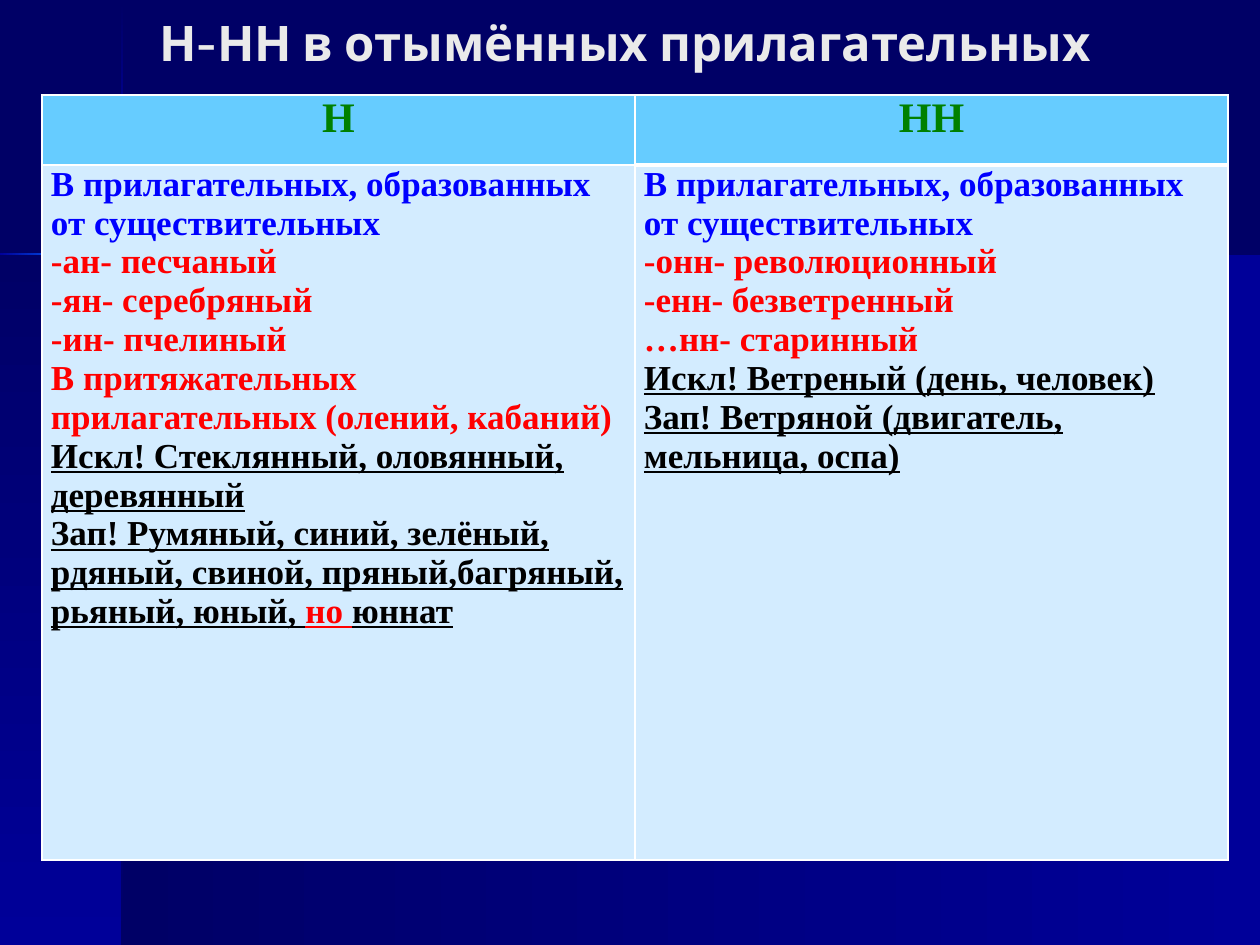
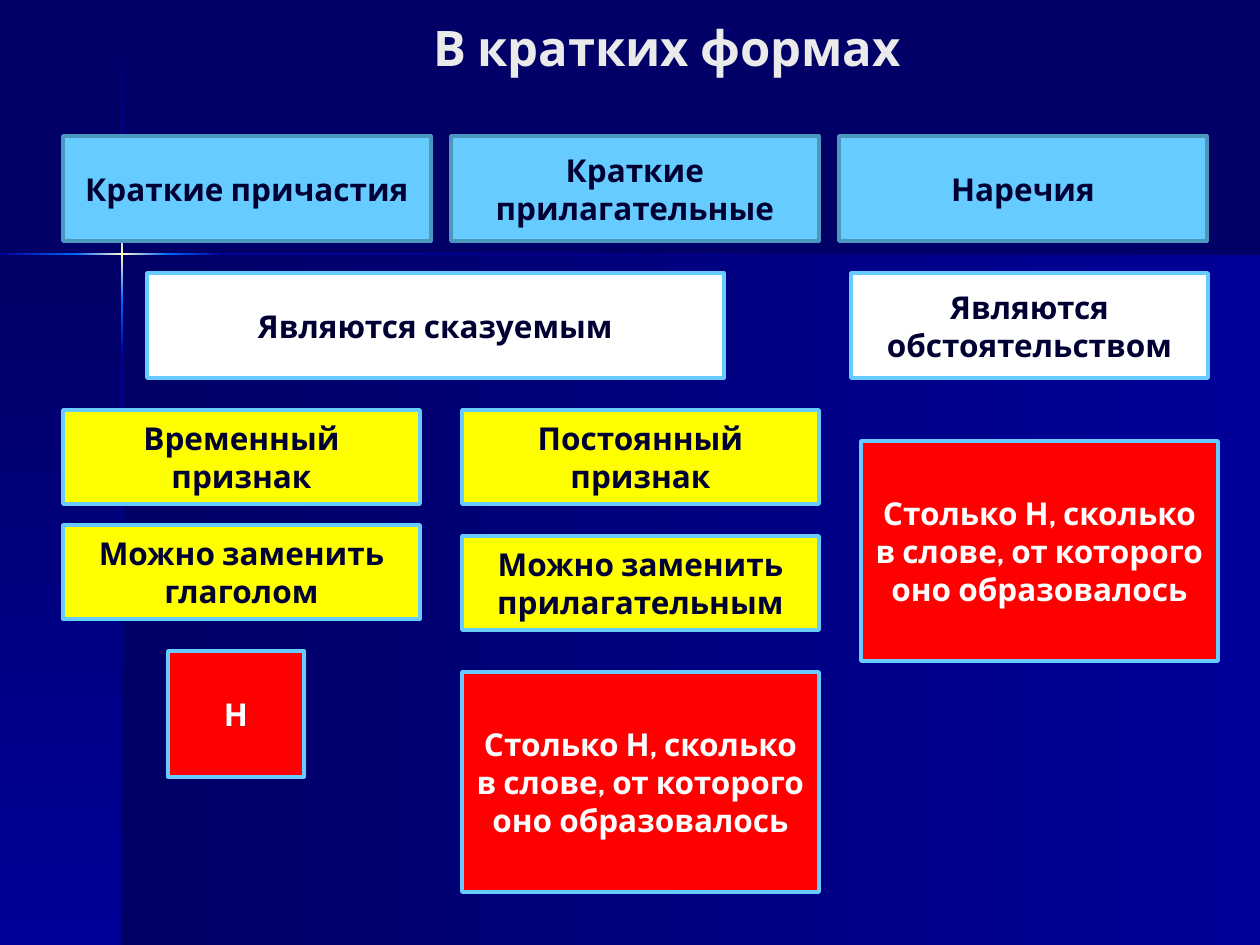
from dataclasses import dataclass
from itertools import pairwise

from lxml.etree import SubElement
from pptx import Presentation
from pptx.dml.color import RGBColor as RGB
from pptx.enum.shapes import MSO_SHAPE as SHAPE
from pptx.enum.text import MSO_ANCHOR as ANCHOR, PP_ALIGN as ALIGN
from pptx.oxml.ns import qn
from pptx.util import Emu, Pt


@dataclass(frozen=True)
class Theme:
    navy: str = "000066"
    blue: str = "000099"
    glow: str = "0066FF"
    cream: str = "FFFFCC"
    title: str = "EAEAEA"
    ink: str = "000033"
    sky: str = "66CCFF"
    sky_edge: str = "4B97BD"
    pale: str = "D3ECFF"
    white: str = "FFFFFF"
    black: str = "000000"
    yellow: str = "FFFF00"
    red: str = "FF0000"
    green: str = "008000"
    rule: str = "0000FF"
    sans: str = "Cabin"
    serif: str = "Times New Roman"
    title_size: int = 28
    head_size: int = 24
    cell_size: int = 20
    box_size: int = 18


T = Theme()
WIDTH, HEIGHT = 1260, 945
EMU_PER_PX = 914400 / 126
CROSS_X, CROSS_Y = 122, 254
RAY_FADE = [(T.blue, T.glow), (T.glow, T.cream, T.glow), (T.glow, T.blue), (T.blue, T.navy)]


def px(n):
    return Emu(round(n * EMU_PER_PX))


def write(p, text, size=T.box_size, color=T.ink, font=T.sans, align=None, underline=None):
    r = p.add_run()
    r.text = text
    r.font.size = Pt(size)
    r.font.name = font
    r.font.bold = True
    r.font.underline = underline
    r.font.color.rgb = RGB.from_string(color)
    if align is not None:
        p.alignment = align


def add_rect(s, x, y, w, h):
    sp = s.shapes.add_shape(SHAPE.RECTANGLE, px(x), px(y), px(w), px(h))
    sp.shadow.inherit = False
    return sp


def add_gradient(s, x, y, w, h, colors, angle):
    sp = add_rect(s, x, y, w, h)
    sp.line.fill.background()
    sp.fill.gradient()
    grad = sp.fill._xPr.find(qn("a:gradFill"))
    for child in list(grad):
        grad.remove(child)
    stops = SubElement(grad, qn("a:gsLst"))
    for i, color in enumerate(colors):
        gs = SubElement(stops, qn("a:gs"), pos=str(100000 * i // (len(colors) - 1)))
        SubElement(gs, qn("a:srgbClr"), val=color)
    SubElement(grad, qn("a:lin"), ang=str(angle * 60000), scaled="0")


def add_backdrop(s):
    s.background.fill.solid()
    s.background.fill.fore_color.rgb = RGB.from_string(T.navy)
    low = HEIGHT - CROSS_Y
    add_gradient(s, CROSS_X, CROSS_Y, WIDTH - CROSS_X, low, (T.navy, T.blue), 0)
    add_gradient(s, 0, CROSS_Y, CROSS_X, low, (T.navy, T.blue), 90)
    rows = pairwise((1, 152, 208, 300, 355, HEIGHT))
    for (top, bottom), colors in zip(rows, [(T.navy, T.blue)] + RAY_FADE):
        add_gradient(s, CROSS_X - 1, top, 2, bottom - top, colors, 90)
    cols = pairwise((0, 76, 168, 223, WIDTH))
    for (left, right), colors in zip(cols, RAY_FADE):
        add_gradient(s, left, CROSS_Y - 1, right - left, 2, colors, 0)


def add_title(s, text, height, align):
    tf = s.shapes.add_textbox(px(147), 0, px(1040), px(height)).text_frame
    tf.word_wrap = True
    tf.vertical_anchor = ANCHOR.MIDDLE
    write(tf.paragraphs[0], text, size=T.title_size, color=T.title, align=align)


def add_box(s, text, x, y, w, h, fill, line=T.sky, color=T.ink):
    sp = add_rect(s, x, y, w, h)
    sp.fill.solid()
    sp.fill.fore_color.rgb = RGB.from_string(fill)
    sp.line.color.rgb = RGB.from_string(line)
    sp.line.width = Pt(2)
    tf = sp.text_frame
    tf.word_wrap = True
    tf.vertical_anchor = ANCHOR.MIDDLE
    write(tf.paragraphs[0], text, color=color, align=ALIGN.CENTER)


def style_cell(cell, fill, **edges):
    cell.margin_left = cell.margin_right = px(9)
    cell.margin_top = cell.margin_bottom = 0
    tc_pr = cell._tc.get_or_add_tcPr()
    for side in ("L", "R", "T", "B"):
        ln = SubElement(tc_pr, qn(f"a:ln{side}"), w=str(Pt(edges.get(side, 1))))
        SubElement(SubElement(ln, qn("a:solidFill")), qn("a:srgbClr"), val=T.white)
    cell.fill.solid()
    cell.fill.fore_color.rgb = RGB.from_string(fill)


def add_rules_table(s, columns):
    tbl = s.shapes.add_table(2, len(columns), px(42), px(95), px(1186), px(765)).table
    tbl.first_row = tbl.horz_banding = False
    for row, height in zip(tbl.rows, (70, 695)):
        row.height = px(height)
    for i, (head, lines) in enumerate(columns):
        tbl.columns[i].width = px(593)
        top, body = tbl.cell(0, i), tbl.cell(1, i)
        divider = 3 if i else 1
        style_cell(top, T.sky, B=divider)
        style_cell(body, T.pale, T=divider)
        write(top.text_frame.paragraphs[0], head, size=T.head_size, color=T.green,
              font=T.serif, align=ALIGN.CENTER)
        tf = body.text_frame
        for j, runs in enumerate(lines):
            p = tf.add_paragraph() if j else tf.paragraphs[0]
            for text, fmt in runs:
                write(p, text, size=T.cell_size, font=T.serif, **fmt)


def build_adjectives(s):
    add_title(s, "Н-НН в отымённых прилагательных", 84, ALIGN.LEFT)
    rule, suffix = {"color": T.rule}, {"color": T.red}
    note = {"color": T.black, "underline": True}
    stress = {"color": T.red, "underline": True}
    origin = [("В прилагательных, образованных от существительных", rule)]
    single = [
        origin,
        [("-ан- песчаный", suffix)],
        [("-ян- серебряный", suffix)],
        [("-ин- пчелиный", suffix)],
        [("В притяжательных прилагательных (олений, кабаний)", suffix)],
        [("Искл! Стеклянный, оловянный, деревянный", note)],
        [("Зап! Румяный, синий, зелёный, рдяный, свиной, пряный,багряный, рьяный, юный, ", note),
         ("но ", stress), ("юннат", note)],
    ]
    double = [
        origin,
        [("-онн- революционный", suffix)],
        [("-енн- безветренный", suffix)],
        [("…нн- старинный", suffix)],
        [("Искл! Ветреный (день, человек)", note)],
        [("Зап! Ветряной (двигатель, мельница, оспа)", note)],
    ]
    add_rules_table(s, [("Н", single), ("НН", double)])


def build_short_forms(s):
    add_title(s, "В кратких формах", 94, ALIGN.CENTER)
    for i, text in enumerate(("Краткие причастия", "Краткие прилагательные", "Наречия")):
        add_box(s, text, 63 + 388 * i, 136, 368, 105, T.sky, line=T.sky_edge)
    add_box(s, "Являются сказуемым", 147, 273, 577, 105, T.white)
    add_box(s, "Являются обстоятельством", 851, 273, 357, 105, T.white)
    for text, x, y in (
        ("Временный признак", 63, 410),
        ("Постоянный признак", 462, 410),
        ("Можно заменить глаголом", 63, 525),
        ("Можно заменить прилагательным", 462, 536),
    ):
        add_box(s, text, x, y, 357, 94, T.yellow)
    same_count = "Столько Н, сколько в слове, от которого оно образовалось"
    for text, x, y, w, h in (
        (same_count, 861, 441, 357, 220),
        (same_count, 462, 672, 357, 220),
        ("Н", 168, 651, 136, 126),
    ):
        add_box(s, text, x, y, w, h, T.red, color=T.white)


def main():
    prs = Presentation()
    prs.slide_width, prs.slide_height = px(WIDTH), px(HEIGHT)
    for build in (build_adjectives, build_short_forms):
        s = prs.slides.add_slide(prs.slide_layouts[6])
        add_backdrop(s)
        build(s)
    prs.save("out.pptx")


if __name__ == "__main__":
    main()
